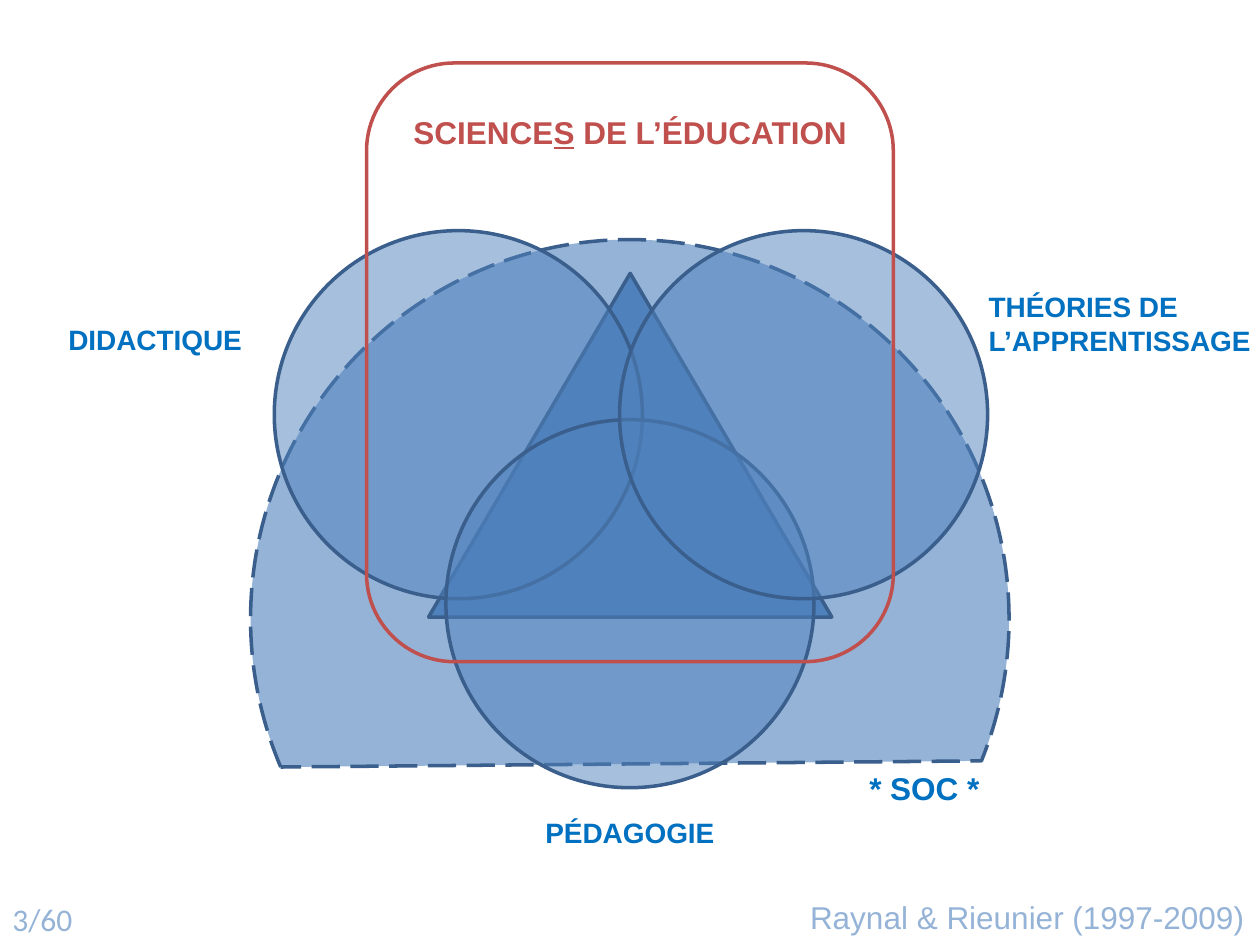
from lxml import etree
from pptx import Presentation
from pptx import util as u
from pptx.dml.color import RGBColor
from pptx.enum import dml, shapes, text
from pptx.oxml.ns import qn

Cm = u.Cm
S = shapes.MSO_SHAPE
A = text.PP_ALIGN
BLUE, PALE, NAVY, RED, LABEL = "4F81BD", "95B3D7", "3A5F8C", "C0504D", "0070C0"


def color(hex_value):
    return RGBColor.from_string(hex_value)


class Diagram:
    """Style and current slide, with one method per kind of element."""
    line_width = u.Pt(2)
    font = "Arial"

    def __init__(self, slide):
        self.slide = slide

    def shape(self, kind, x, y, w, h, fill=None, line=NAVY, alpha=None):
        sp = self.slide.shapes.add_shape(kind, Cm(x), Cm(y), Cm(w), Cm(h))
        sp.shadow.inherit = False
        if fill:
            sp.fill.solid()
            sp.fill.fore_color.rgb = color(fill)
        else:
            sp.fill.background()
        if alpha:
            clr = sp.fill._xPr.find(qn("a:solidFill"))[0]
            etree.SubElement(clr, qn("a:alpha"), val=str(alpha * 1000))
        sp.line.color.rgb = color(line)
        sp.line.width = self.line_width
        return sp

    def circle(self, cx, cy, d):
        return self.shape(S.OVAL, cx - d / 2, cy - d / 2, d, d, BLUE, alpha=50)

    def label(self, runs, x, y, w, h, align=A.LEFT, wrap=False, **style):
        """Add text; runs is a string or a list of (text, underlined) pairs."""
        sp = self.slide.shapes.add_textbox(Cm(x), Cm(y), Cm(w), Cm(h))
        tf = sp.text_frame
        tf.word_wrap = wrap
        tf.auto_size = text.MSO_AUTO_SIZE.SHAPE_TO_FIT_TEXT
        p = tf.paragraphs[0]
        p.alignment = align
        fmt = {"name": self.font, "size": u.Pt(18), "bold": True, **style}
        rgb = color(fmt.pop("rgb", LABEL))
        for part, underline in [(runs, None)] if isinstance(runs, str) else runs:
            for i, piece in enumerate(part.split("\n")):
                if i:
                    p.add_line_break()
                r = p.add_run()
                r.text = piece
                for name, value in {**fmt, "underline": underline}.items():
                    setattr(r.font, name, value)
                r.font.color.rgb = rgb
        return sp


def main():
    prs = Presentation()
    prs.slide_width, prs.slide_height = Cm(25.4), Cm(19.05)
    d = Diagram(prs.slides.add_slide(prs.slide_layouts[6]))
    mid = 12.7

    # Social context behind everything
    soc = d.shape(S.CHORD, 5.05, 4.83, 15.29, 15.29, PALE)
    soc.rotation = 112
    soc.line.dash_style = dml.MSO_LINE.LONG_DASH

    # Triangle and the three overlapping fields
    d.shape(S.ISOSCELES_TRIANGLE, 8.64, 5.51, 8.13, 6.93, BLUE)
    for dx, cy in [(-3.46, 8.36), (0, 12.17), (3.5, 8.36)]:
        d.circle(mid + dx, cy, 7.42)
    d.label("* SOC *", 17.25, 15.37, 2.77, 1.02, A.CENTER)

    # Sciences of education frame
    d.shape(S.ROUNDED_RECTANGLE, 7.39, 1.27, 10.62, 12.07, line=RED)
    d.label([("SCIENCE", None), ("S", True), (" DE L’ÉDUCATION", None)],
            8.03, 2.16, 9.35, 1.02, A.CENTER, rgb=RED)

    # Field names
    for words, x, y, w, h, align in [
        ("DIDACTIQUE", 0.71, 6.38, 4.42, 0.94, A.RIGHT),
        ("THÉORIES DE \nL’APPRENTISSAGE", 19.68, 5.72, 5.92, 1.63, A.LEFT),
        ("PÉDAGOGIE", 10.54, 16.31, 4.32, 0.94, A.CENTER),
    ]:
        d.label(words, x, y, w, h, align, wrap=True, size=u.Pt(16))

    # Source and page number
    d.label("Raynal & Rieunier (1997-2009)", 16.08, 17.98, 9.35, 1.02,
            bold=False, rgb=PALE)
    d.label("3/60", 0, 18.01, 1.75, 1.02, bold=False, rgb=PALE, name="Calibri")

    prs.save("out.pptx")


if __name__ == "__main__":
    main()
